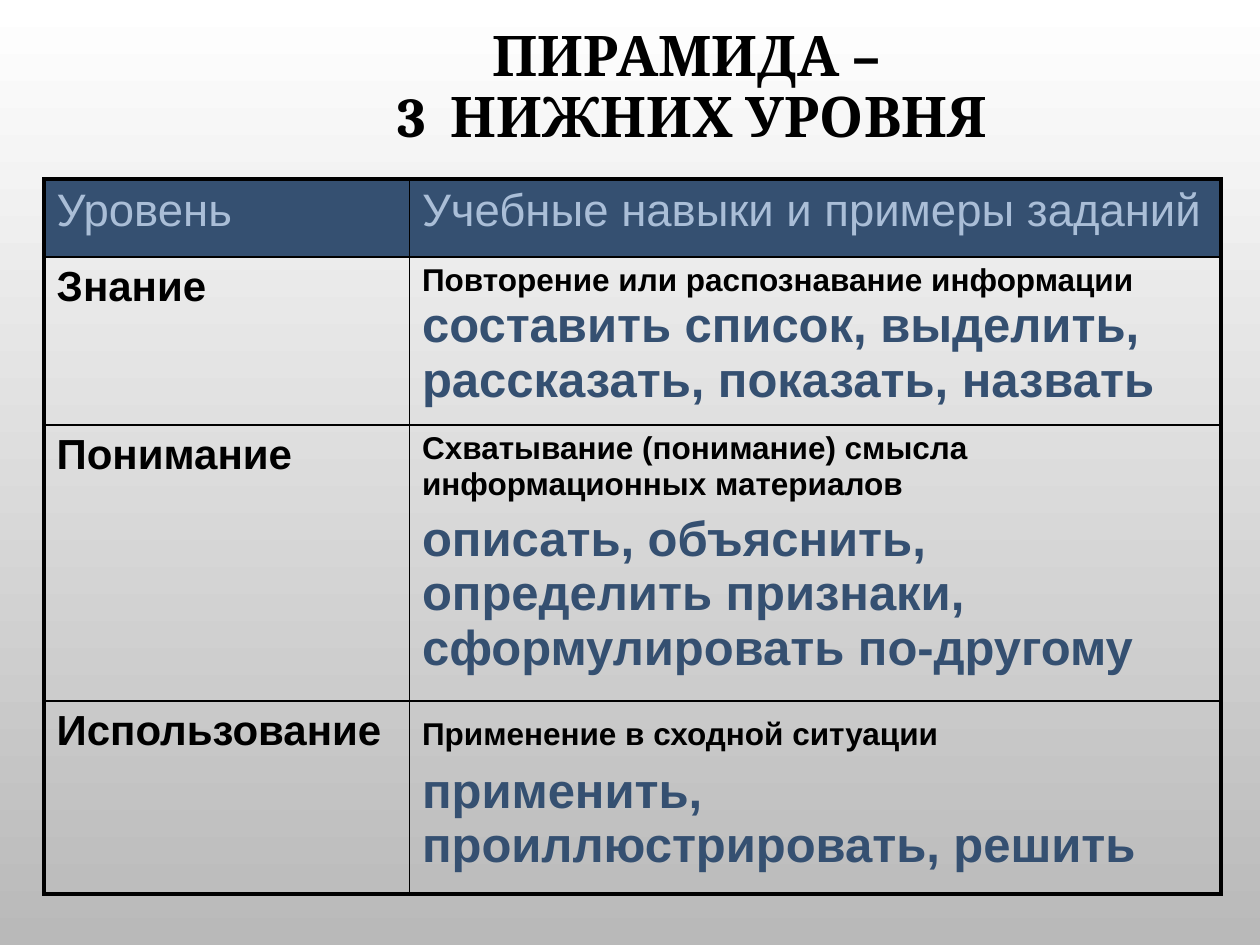
from lxml.etree import SubElement
from pptx import Presentation
from pptx.dml.color import RGBColor
from pptx.enum.text import MSO_ANCHOR as Anchor, PP_ALIGN as Align
from pptx.oxml.ns import qn
from pptx.util import Inches, Pt

BLACK, NAVY, PALE = "000000", "355071", "AABED7"
OUTER, INNER = 2.25, 1


def color(hex_code):
    return RGBColor.from_string(hex_code)


class SlideBuilder:
    heading_font = "Cambria"
    body_font = "Arial"

    def __init__(self, slide):
        self.slide = slide

    def background(self, top, bottom):
        fill = self.slide.background.fill
        fill.gradient()
        fill.gradient_angle = 270
        for stop, hex_code, position in zip(fill.gradient_stops, (top, bottom), (0, 1)):
            stop.color.rgb = color(hex_code)
            stop.position = position

    def run(self, paragraph, text, size, hex_code, bold, font):
        run = paragraph.add_run()
        run.text = text
        run.font.size = Pt(size)
        run.font.bold = bold
        run.font.name = font
        run.font.color.rgb = color(hex_code)

    def title(self, lines, left, top, width, height):
        box = self.slide.shapes.add_textbox(
            Inches(left), Inches(top), Inches(width), Inches(height))
        frame = box.text_frame
        frame.word_wrap = True
        frame.vertical_anchor = Anchor.MIDDLE
        paragraph = frame.paragraphs[0]
        paragraph.alignment = Align.CENTER
        paragraph.line_spacing = 0.9
        for index, line in enumerate(lines):
            if index:
                paragraph.add_line_break()
            self.run(paragraph, line, 32, BLACK, True, self.heading_font)

    def borders(self, cell, widths):
        properties = cell._tc.get_or_add_tcPr()
        for side, width in zip("LRTB", widths):
            line = SubElement(properties, qn(f"a:ln{side}"), w=str(Pt(width)))
            fill = SubElement(line, qn("a:solidFill"))
            SubElement(fill, qn("a:srgbClr"), val=BLACK)

    def cell(self, cell, paragraphs, bold):
        for index, runs in enumerate(paragraphs):
            if index:
                paragraph = cell.text_frame.add_paragraph()
                paragraph.space_before = Pt(5.6)
            else:
                paragraph = cell.text_frame.paragraphs[0]
            for text, size, hex_code in runs:
                self.run(paragraph, text, size, hex_code, bold, self.body_font)

    def table(self, rows, left, top, widths, heights):
        table = self.slide.shapes.add_table(
            len(rows), len(widths), Inches(left), Inches(top),
            Inches(sum(widths)), Inches(sum(heights))).table
        table.first_row = table.horz_banding = False
        for column, width in zip(table.columns, widths):
            column.width = Inches(width)
        last_row, last_column = len(rows) - 1, len(widths) - 1
        for r, (row, height) in enumerate(zip(rows, heights)):
            table.rows[r].height = Inches(height)
            for c, paragraphs in enumerate(row):
                cell = table.cell(r, c)
                on_edge = (c == 0, c == last_column, r == 0, r == last_row)
                self.borders(cell, [OUTER if edge else INNER for edge in on_edge])
                if r == 0:
                    cell.fill.solid()
                    cell.fill.fore_color.rgb = color(NAVY)
                else:
                    cell.fill.background()
                self.cell(cell, paragraphs, bold=r > 0)


def header(text):
    return [[(text, 26, PALE)]]


def level(text):
    return [[(text, 24, BLACK)]]


def skill(text):
    return (text, 18, BLACK)


def tasks(text):
    return (text, 28, NAVY)


def main():
    presentation = Presentation()
    presentation.slide_width, presentation.slide_height = Inches(10), Inches(7.5)
    builder = SlideBuilder(
        presentation.slides.add_slide(presentation.slide_layouts[6]))

    # Background and title
    builder.background("FFFFFF", "B9B9B9")
    builder.title(["ПИРАМИДА – ", "3  НИЖНИХ УРОВНЯ"], 1.25, 0.08, 8.49, 1.25)

    # Levels with their skills and sample tasks
    levels = [
        [header("Уровень"), header("Учебные навыки и примеры заданий")],
        [level("Знание"),
         [[skill("Повторение или распознавание информации "),
           tasks("составить список, выделить, рассказать, показать, назвать")]]],
        [level("Понимание"),
         [[skill("Схватывание (понимание) смысла информационных материалов")],
          [tasks("описать, объяснить, определить признаки, "
                 "сформулировать по-другому")]]],
        [level("Использование"),
         [[skill("Применение в сходной ситуации"), (" ", 24, BLACK)],
          [tasks("применить, проиллюстрировать, решить")]]],
    ]
    builder.table(levels, 0.35, 1.42, [2.9, 6.44], [0.62, 1.33, 2.19, 1.53])

    presentation.save("out.pptx")


if __name__ == "__main__":
    main()
